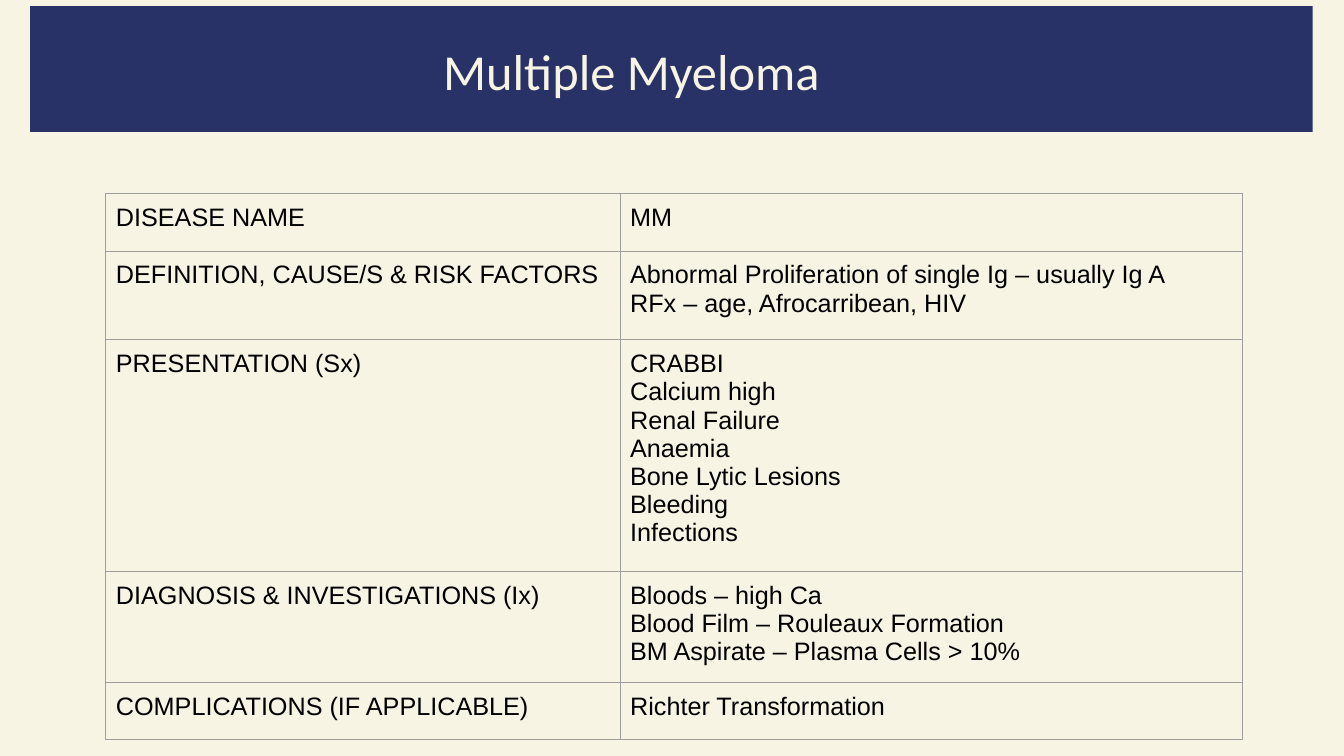
import dataclasses

import lxml.etree
import pptx
import pptx.dml.color
import pptx.enum.shapes
import pptx.enum.text
import pptx.oxml.ns
import pptx.util

Inches = pptx.util.Inches


@dataclasses.dataclass(frozen=True)
class Theme:
    cream: str = "F8F4E4"
    navy: str = "293267"
    black: str = "000000"
    rule: str = "9E9E9E"
    rule_width: float = 0.75
    title_font: str = "Calibri"
    title_size: int = 36
    body_font: str = "Arial"
    body_size: int = 18
    cell_margin: float = 0.1


THEME = Theme()
SLIDE_WIDTH, SLIDE_HEIGHT = 13.33, 7.5
BAND_AREA = (0.3, 0.06, 12.72, 1.25)
TITLE_AREA = (2.87, 0.34, 6.9, 0.71)
TABLE_ORIGIN = (1.05, 1.92)
COLUMN_WIDTHS = (5.1, 6.17)

# Row height, heading, findings
DISEASE_FACTS = (
    (0.57, "DISEASE NAME", ("MM",)),
    (0.88, "DEFINITION, CAUSE/S & RISK FACTORS",
     ("Abnormal Proliferation of single Ig – usually Ig A",
      "RFx – age, Afrocarribean, HIV")),
    (2.3, "PRESENTATION (Sx)",
     ("CRABBI", "Calcium high", "Renal Failure", "Anaemia",
      "Bone Lytic Lesions", "Bleeding", "Infections")),
    (1.1, "DIAGNOSIS & INVESTIGATIONS (Ix)",
     ("Bloods – high Ca", "Blood Film – Rouleaux Formation",
      "BM Aspirate – Plasma Cells > 10%")),
    (0.57, "COMPLICATIONS (IF APPLICABLE)", ("Richter Transformation",)),
)


def rgb(value):
    return pptx.dml.color.RGBColor.from_string(value)


def set_font(paragraph, name, size, color):
    paragraph.font.name = name
    paragraph.font.size = pptx.util.Pt(size)
    paragraph.font.color.rgb = rgb(color)


def add_band(slide):
    """Put the title's band behind everything else."""
    band = slide.shapes.add_shape(
        pptx.enum.shapes.MSO_SHAPE.RECTANGLE, *map(Inches, BAND_AREA))
    band.shadow.inherit = False
    band.fill.solid()
    band.fill.fore_color.rgb = rgb(THEME.navy)
    band.line.fill.background()
    slide.shapes._spTree.insert(2, band._element)


def set_title(slide, text):
    title = slide.shapes.title
    title.left, title.top, title.width, title.height = map(Inches, TITLE_AREA)
    frame = title.text_frame
    frame.text = text
    frame.word_wrap = True
    frame.auto_size = pptx.enum.text.MSO_AUTO_SIZE.NONE
    frame.vertical_anchor = pptx.enum.text.MSO_ANCHOR.MIDDLE
    heading = frame.paragraphs[0]
    heading.alignment = pptx.enum.text.PP_ALIGN.CENTER
    set_font(heading, THEME.title_font, THEME.title_size, THEME.cream)


def set_borders(cell):
    qn = pptx.oxml.ns.qn
    properties = cell._tc.get_or_add_tcPr()
    for position, side in enumerate(("lnL", "lnR", "lnT", "lnB")):
        border = lxml.etree.Element(
            qn(f"a:{side}"), w=str(pptx.util.Pt(THEME.rule_width)))
        fill = lxml.etree.SubElement(border, qn("a:solidFill"))
        lxml.etree.SubElement(fill, qn("a:srgbClr"), val=THEME.rule)
        properties.insert(position, border)


def fill_cell(cell, lines):
    cell.fill.background()
    margin = Inches(THEME.cell_margin)
    cell.margin_left = cell.margin_right = margin
    cell.margin_top = cell.margin_bottom = margin
    cell.text = "\n".join(lines)
    for paragraph in cell.text_frame.paragraphs:
        set_font(paragraph, THEME.body_font, THEME.body_size, THEME.black)
    set_borders(cell)


def add_fact_table(slide, facts):
    total_height = sum(height for height, _, _ in facts)
    table = slide.shapes.add_table(
        len(facts), len(COLUMN_WIDTHS), *map(Inches, TABLE_ORIGIN),
        Inches(sum(COLUMN_WIDTHS)), Inches(total_height)).table
    table.first_row = table.horz_banding = False
    for column, width in zip(table.columns, COLUMN_WIDTHS):
        column.width = Inches(width)
    for row, (height, heading, findings) in zip(table.rows, facts):
        row.height = Inches(height)
        for cell, lines in zip(row.cells, ((heading,), findings)):
            fill_cell(cell, lines)


def main():
    deck = pptx.Presentation()
    deck.slide_width = Inches(SLIDE_WIDTH)
    deck.slide_height = Inches(SLIDE_HEIGHT)
    slide = deck.slides.add_slide(deck.slide_layouts.get_by_name("Title Only"))
    slide.background.fill.solid()
    slide.background.fill.fore_color.rgb = rgb(THEME.cream)
    add_band(slide)
    set_title(slide, "Multiple Myeloma ")
    add_fact_table(slide, DISEASE_FACTS)
    deck.save("out.pptx")


if __name__ == "__main__":
    main()
